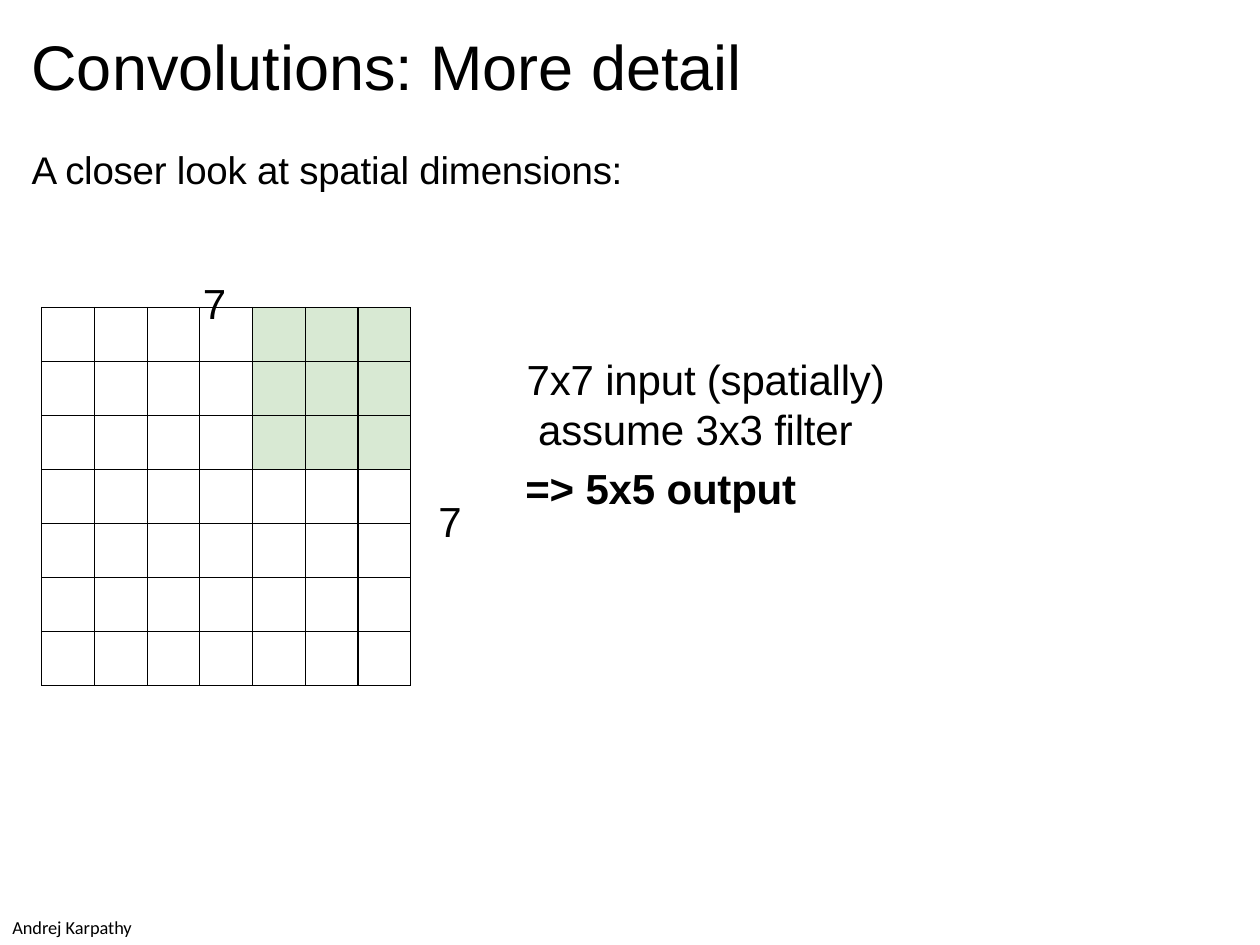
from dataclasses import dataclass

from lxml.etree import SubElement
from pptx import Presentation
from pptx.dml.color import RGBColor as RGB
from pptx.oxml.ns import qn
from pptx.util import Pt

COLORS = {"ink": "000000", "filter": "D8E9D3"}
GRID_SIZE, FILTER_SIZE = 7, 3
CELL_W, CELL_H = 30.14, 30.86


@dataclass(frozen=True)
class Para:
    text: str
    indent: float = 0
    line: float = 0
    before: float = 0


@dataclass(frozen=True)
class Label:
    paras: tuple[Para, ...]
    box: tuple[float, float, float, float]
    size: float = 24
    bold: bool = False
    font: str = "Arial"
    spacing: float = -0.1
    inset: tuple[float, float] = (0, 0)
    wrap: bool = True


UNDER_GRID = (
    Label((Para("=> 5x5 output", 0.72),), (299.5, 264.2, 157.7, 29.5), bold=True),
    Label(
        (
            Para("7", 0.72),
            Para("7x7 input (spatially)\v assume 3x3 filter", 185.8, 28.5, 15.2),
        ),
        (115.2, 158.4, 393.1, 103),
    ),
    Label((Para("7", 0.72),), (249.8, 283, 15.1, 29.5)),
    Label((Para("A closer look at spatial dimensions:"),), (18, 83.5, 684.7, 26.6), size=22),
)
OVER_GRID = (
    Label((Para("Convolutions: More detail"),), (18, 15.8, 684.7, 43.9), size=36, spacing=0),
    Label((Para("Andrej Karpathy"),), (0, 519.8, 84.2, 20.2), size=10.5,
          font="Calibri", spacing=0, inset=(7.2, 3.6), wrap=False),
)


def add_text(p, text: str, *, size: float, font: str, bold: bool, spacing: float) -> None:
    p.text = text
    for r in p.runs:
        r.font.size, r.font.name, r.font.bold = Pt(size), font, bold
        r.font.color.rgb = RGB.from_string(COLORS["ink"])
        if spacing:
            r._r.get_or_add_rPr().set("spc", str(round(spacing * 100)))


def add_label(s, label: Label) -> None:
    tf = s.shapes.add_textbox(*map(Pt, label.box)).text_frame
    tf.word_wrap = label.wrap
    tf.margin_left = tf.margin_right = Pt(label.inset[0])
    tf.margin_top = tf.margin_bottom = Pt(label.inset[1])
    for i, para in enumerate(label.paras):
        p = tf.add_paragraph() if i else tf.paragraphs[0]
        add_text(p, para.text, size=label.size, font=label.font,
                 bold=label.bold, spacing=label.spacing)
        p._p.get_or_add_pPr().set("marL", str(Pt(para.indent)))
        if para.line:
            p.line_spacing = Pt(para.line)
        p.space_before = Pt(para.before)


def add_borders(cell, width: float) -> None:
    tcPr = cell._tc.get_or_add_tcPr()
    for i, side in enumerate(("a:lnL", "a:lnR", "a:lnT", "a:lnB")):
        ln = SubElement(tcPr, qn(side), w=str(Pt(width)))
        SubElement(SubElement(ln, qn("a:solidFill")), qn("a:srgbClr"), val=COLORS["ink"])
        tcPr.remove(ln)
        tcPr.insert(i, ln)


def add_grid(s, left: float, top: float) -> None:
    n = GRID_SIZE
    table = s.shapes.add_table(
        n, n, Pt(left), Pt(top), Pt(n * CELL_W), Pt(n * CELL_H)
    ).table
    table.first_row = table.horz_banding = False
    for column in table.columns:
        column.width = Pt(CELL_W)
    for i, row in enumerate(table.rows):
        row.height = Pt(CELL_H)
        for j, cell in enumerate(row.cells):
            if i < FILTER_SIZE and j >= n - FILTER_SIZE:
                cell.fill.solid()
                cell.fill.fore_color.rgb = RGB.from_string(COLORS["filter"])
            else:
                cell.fill.background()
            add_borders(cell, 0.75)


def main() -> None:
    """Build the slide on the spatial dimensions of a convolution."""
    prs = Presentation()
    prs.slide_width, prs.slide_height = Pt(720), Pt(540)
    s = prs.slides.add_slide(prs.slide_layouts[6])
    for label in UNDER_GRID:
        add_label(s, label)
    add_grid(s, 23.8, 175.7)
    for label in OVER_GRID:
        add_label(s, label)
    prs.save("out.pptx")


if __name__ == "__main__":
    main()
